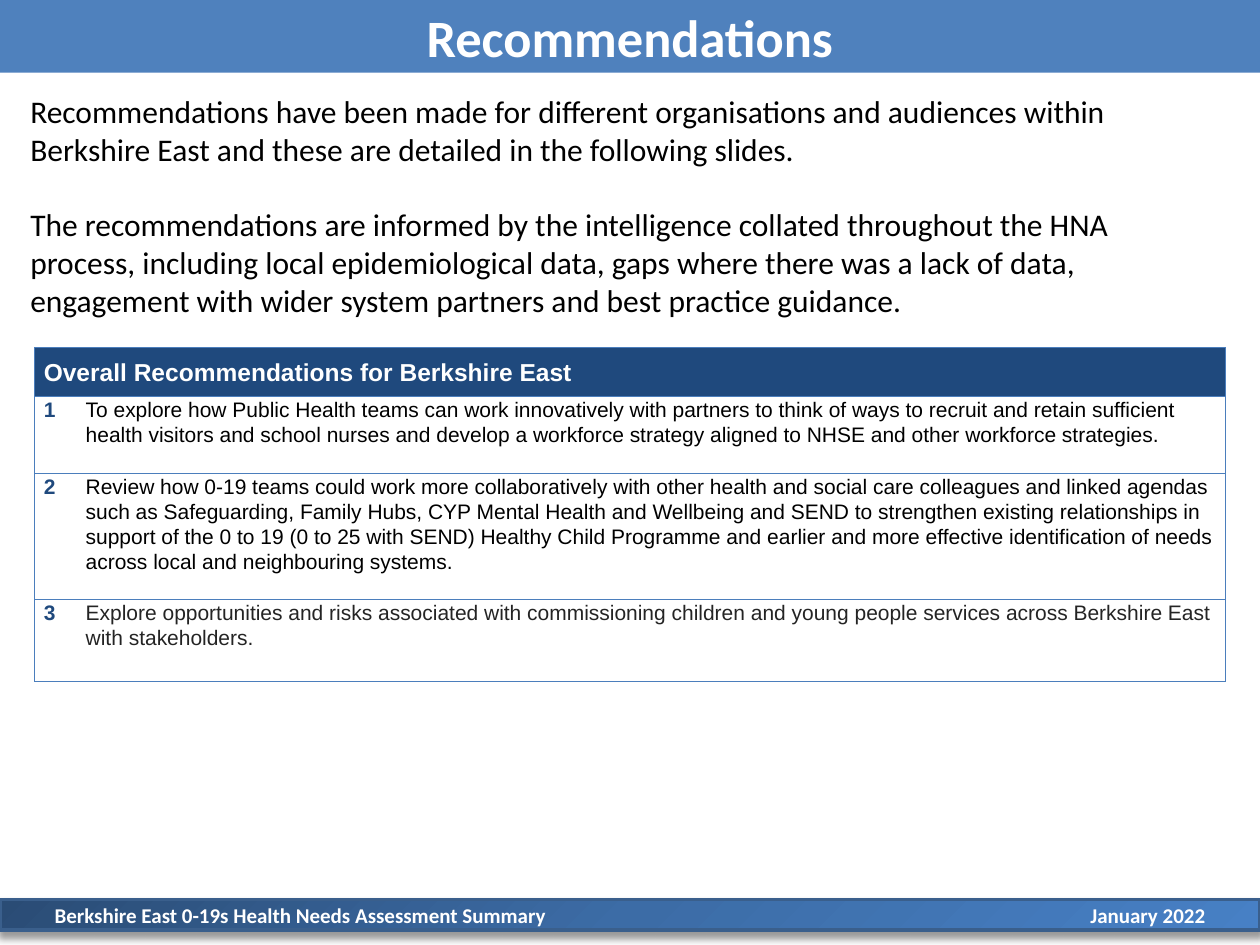
from copy import deepcopy

from lxml import etree
from pptx import Presentation
from pptx.dml.color import RGBColor
from pptx.enum.shapes import MSO_SHAPE
from pptx.enum.text import MSO_ANCHOR, PP_ALIGN
from pptx.oxml.ns import qn
from pptx.util import Pt

RECTANGLE = MSO_SHAPE.RECTANGLE
MIDDLE = MSO_ANCHOR.MIDDLE
TOP = MSO_ANCHOR.TOP
CENTER = PP_ALIGN.CENTER
LEFT = PP_ALIGN.LEFT

WHITE, BLACK, NAVY, BORDER = "FFFFFF", "000000", "1F497D", "4B7EBC"

INTRO = [
    "Recommendations have been made for different organisations and audiences within "
    "Berkshire East and these are detailed in the following slides.",
    "The recommendations are informed by the intelligence collated throughout the HNA "
    "process, including local epidemiological data, gaps where there was a lack of data, "
    "engagement with wider system partners and best practice guidance.",
]
# Recommendation text, text colour and row height in points
RECOMMENDATIONS = [
    ("To explore how Public Health teams can work innovatively with partners to think of "
     "ways to recruit and retain sufficient health visitors and school nurses and develop a "
     "workforce strategy aligned to NHSE and other workforce strategies.", BLACK, 44),
    ("Review how 0-19 teams could work more collaboratively with other health and social "
     "care colleagues and linked agendas such as Safeguarding, Family Hubs, CYP Mental "
     "Health and Wellbeing and SEND to strengthen existing relationships in support of the "
     "0 to 19 (0 to 25 with SEND) Healthy Child Programme and earlier and more effective "
     "identification of needs across local and neighbouring systems.", BLACK, 72),
    ("Explore opportunities and risks associated with commissioning children and young "
     "people services across Berkshire East with stakeholders.", "242424", 46.8),
]


def color(hex_value):
    return RGBColor.from_string(hex_value)


def format_runs(paragraph, font_name, size, hex_value, bold=False):
    for run in paragraph.runs:
        run.font.name = font_name
        run.font.size = Pt(size)
        run.font.bold = bold
        run.font.color.rgb = color(hex_value)


def add_bar(slide, box, text):
    bar = slide.shapes.add_shape(RECTANGLE, *map(Pt, box))
    bar.shadow.inherit = False
    bar.text_frame.text = text
    bar.text_frame.vertical_anchor = MIDDLE
    return bar


def add_title(slide, box):
    bar = add_bar(slide, box, "Recommendations")
    bar.fill.solid()
    bar.fill.fore_color.rgb = color("4F81BD")
    bar.line.fill.background()
    paragraph = bar.text_frame.paragraphs[0]
    paragraph.alignment = CENTER
    format_runs(paragraph, "Calibri", 30, WHITE, bold=True)


def add_footer(slide, box):
    bar = add_bar(slide, box, "Berkshire East 0-19s Health Needs Assessment Summary\tJanuary 2022")
    bar.line.color.rgb = color("3A5F8C")
    bar.line.width = Pt(2)

    # Three-stop diagonal gradient
    bar.fill.gradient()
    bar.fill.gradient_angle = 315
    stop_list = bar.fill._xPr.find(".//" + qn("a:gsLst"))
    stop_list.insert(1, deepcopy(stop_list[0]))
    gradient = [(0, "2A4C75"), (0.5, "3C6CA6"), (1, "4780C5")]
    for stop, (position, hex_value) in zip(bar.fill.gradient_stops, gradient):
        stop.position = position
        stop.color.rgb = color(hex_value)

    # Soft shadow below the bar
    effects = bar._element.spPr.find(qn("a:effectLst"))
    shadow = etree.SubElement(effects, qn("a:outerShdw"), blurRad=str(Pt(4)),
                              dist=str(Pt(3)), dir="5400000", rotWithShape="0")
    shade = etree.SubElement(shadow, qn("a:srgbClr"), val=BLACK)
    etree.SubElement(shade, qn("a:alpha"), val="40000")

    # Date held against the right margin by a tab stop
    margin = 31.2
    frame = bar.text_frame
    frame.margin_left = Pt(margin)
    frame.margin_right = Pt(margin - 2)
    paragraph = frame.paragraphs[0]
    paragraph.alignment = LEFT
    tabs = etree.SubElement(paragraph._p.get_or_add_pPr(), qn("a:tabLst"))
    etree.SubElement(tabs, qn("a:tab"), pos=str(Pt(box[2] - 2 * margin)), algn="r")
    format_runs(paragraph, "Calibri", 12, WHITE, bold=True)


def add_intro(slide, box):
    frame = slide.shapes.add_textbox(*map(Pt, box)).text_frame
    frame.word_wrap = True
    frame.margin_left = Pt(14.4)
    frame.text = "\n".join(INTRO)
    for paragraph in frame.paragraphs:
        format_runs(paragraph, "Calibri", 18, BLACK)
    frame.paragraphs[0].space_after = Pt(21.6)


def set_borders(cell, visible_sides):
    properties = cell._tc.get_or_add_tcPr()
    for index, side in enumerate("LRTB"):
        line = etree.Element(qn("a:ln" + side), w=str(Pt(0.75)))
        if side in visible_sides:
            fill = etree.SubElement(line, qn("a:solidFill"))
            etree.SubElement(fill, qn("a:srgbClr"), val=BORDER)
        else:
            etree.SubElement(line, qn("a:noFill"))
        properties.insert(index, line)


def fill_cell(cell, text, size, hex_value, bold, sides, fill=None, anchor=TOP):
    cell.text = text
    cell.vertical_anchor = anchor
    cell.margin_left = cell.margin_right = Pt(5.2)
    cell.margin_top = cell.margin_bottom = 0
    paragraph = cell.text_frame.paragraphs[0]
    paragraph.line_spacing = 1.06
    paragraph.space_after = Pt(8)
    format_runs(paragraph, "Arial", size, hex_value, bold)
    if fill:
        cell.fill.solid()
        cell.fill.fore_color.rgb = color(fill)
    else:
        cell.fill.background()
    set_borders(cell, sides)


def add_recommendations(slide, box):
    heights = [28] + [height for _, _, height in RECOMMENDATIONS]
    table = slide.shapes.add_table(len(heights), 2, *map(Pt, box)).table
    table.first_row = table.horz_banding = False
    number_width = 24
    table.columns[0].width = Pt(number_width)
    table.columns[1].width = Pt(box[2] - number_width)
    for row, height in zip(table.rows, heights):
        row.height = Pt(height)

    # Heading across both columns
    heading = table.cell(0, 0)
    heading.merge(table.cell(0, 1))
    fill_cell(heading, "Overall Recommendations for Berkshire East", 14, WHITE, True,
              "LRTB", NAVY, MIDDLE)
    set_borders(table.cell(0, 1), "RTB")

    # Numbered rows
    for number, (text, hex_value, _) in enumerate(RECOMMENDATIONS, start=1):
        fill_cell(table.cell(number, 0), str(number), 12, NAVY, True, "LTB")
        fill_cell(table.cell(number, 1), text, 12, hex_value, False, "RTB")


def main():
    presentation = Presentation()
    presentation.slide_width, presentation.slide_height = Pt(720), Pt(540)
    slide = presentation.slides.add_slide(presentation.slide_layouts[6])
    add_footer(slide, (0, 514, 720, 17.5))
    add_title(slide, (0, 0, 720, 41.5))
    add_intro(slide, (2.9, 49, 686, 138))
    add_recommendations(slide, (19.8, 198.8, 680.4, 190.8))
    presentation.save("out.pptx")


if __name__ == "__main__":
    main()
